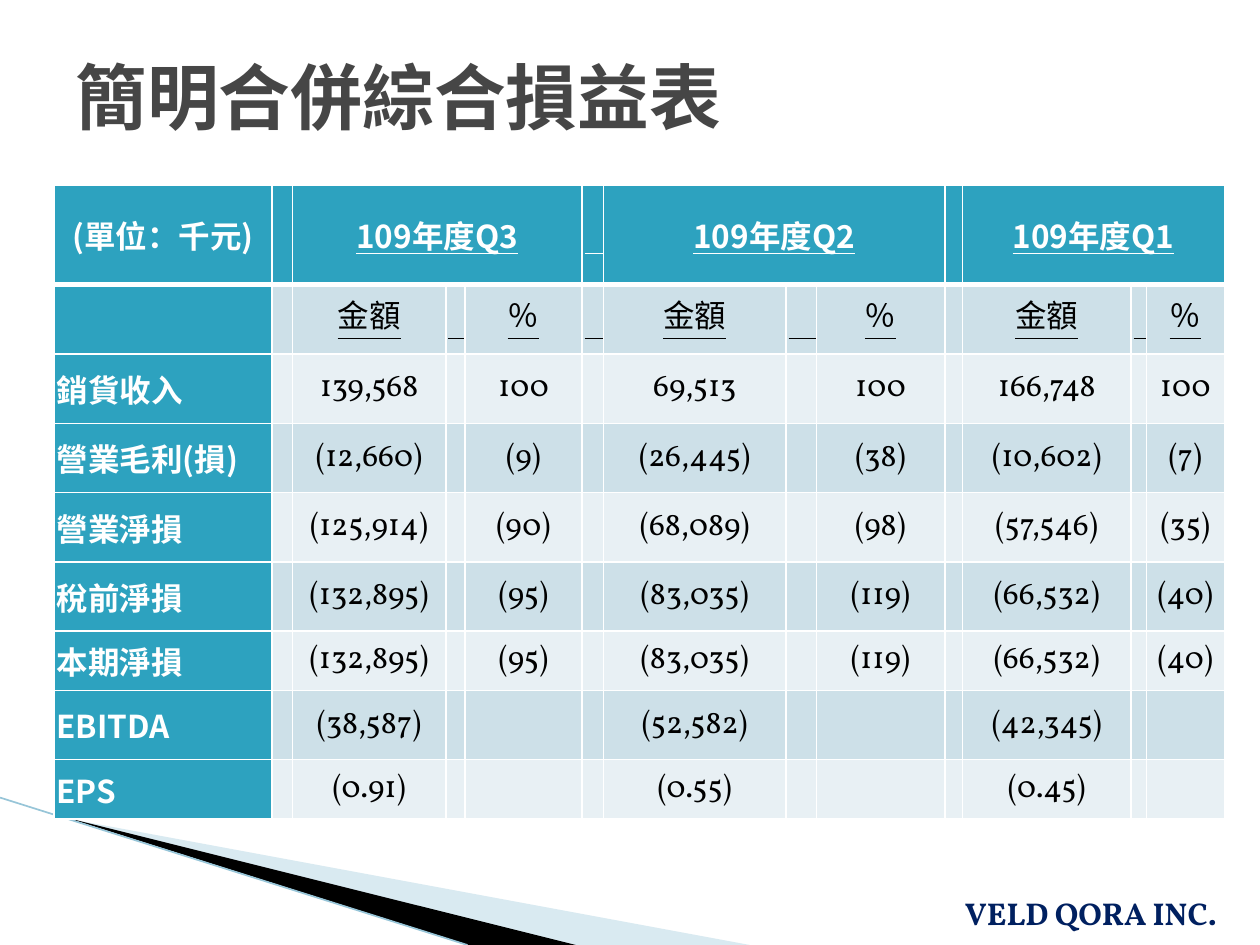
from itertools import product

from lxml import etree
from pptx import Presentation
from pptx.dml.color import RGBColor
from pptx.enum.shapes import MSO_CONNECTOR
from pptx.enum.text import MSO_ANCHOR, PP_ALIGN
from pptx.oxml import parse_xml
from pptx.oxml.ns import nsdecls, qn
from pptx.util import Inches, Pt

SANS, SERIF = "Noto Sans CJK SC", "Vollkorn"
TEAL, BAND_DARK, BAND_LIGHT, WHITE = "2DA2BF", "CDE0E8", "E8F0F4", "FFFFFF"

COLUMNS = [1.73, 0.16, 1.22, 0.15, 0.93, 0.17, 1.45, 0.24, 1.02, 0.14, 1.34, 0.12, 0.62]
ROWS = [0.79, 0.55, 0.55, 0.55, 0.55, 0.55, 0.47, 0.55, 0.47]
QUARTERS = ["109年度Q3", "109年度Q2", "109年度Q1"]
QUARTER_COLUMNS = [2, 6, 10]
VALUE_COLUMNS = [2, 4, 6, 8, 10, 12]
RULED_GAPS = [(0, 5), (1, 3), (1, 5), (1, 7), (1, 11)]
RESULTS = {
    "銷貨收入": ["139,568", "100", "69,513", "100", "166,748", "100"],
    "營業毛利(損)": ["(12,660)", "(9)", "(26,445)", "(38)", "(10,602)", "(7)"],
    "營業淨損": ["(125,914)", "(90)", "(68,089)", "(98)", "(57,546)", "(35)"],
    "稅前淨損": ["(132,895)", "(95)", "(83,035)", "(119)", "(66,532)", "(40)"],
    "本期淨損": ["(132,895)", "(95)", "(83,035)", "(119)", "(66,532)", "(40)"],
    "EBITDA": ["(38,587)", "", "(52,582)", "", "(42,345)", ""],
    "EPS": ["(0.91)", "", "(0.55)", "", "(0.45)", ""],
}


def color(value):
    return RGBColor.from_string(value)


def write(frame, text, typeface, ink, align=PP_ALIGN.LEFT, **font_values):
    paragraph = frame.paragraphs[0]
    paragraph.alignment = align
    run = paragraph.add_run()
    run.text = text
    for name, value in {"name": typeface, "size": Pt(18), **font_values}.items():
        setattr(run.font, name, value)
    run.font.color.rgb = color(ink)
    east_asian = etree.SubElement(run.font._element, qn("a:ea"))
    east_asian.set("typeface", typeface)


def add_label(slide, box, text, typeface, ink, wrap, size):
    frame = slide.shapes.add_textbox(*map(Inches, box)).text_frame
    frame.word_wrap = wrap
    write(frame, text, typeface, ink, size=Pt(size), bold=True)


def add_swoosh(slide, box):
    left, top, width, height = box
    right, bottom = left + width, top + height

    def wedge(points, fill):
        start, *rest = [(Inches(x), Inches(y)) for x, y in points]
        builder = slide.shapes.build_freeform(*start, scale=1.0)
        builder.add_line_segments(rest, close=True)
        shape = builder.convert_to_shape()
        shape.shadow.inherit = False
        shape.fill.solid()
        shape.fill.fore_color.rgb = color(fill)
        shape.line.fill.background()
        return shape

    # Pale wedge at 40 % opacity, then the black one
    tip = left + 0.55
    pale = wedge([(tip, top + 0.17), (right, bottom), (right - 1.39, bottom)], "A0CBDC")
    tint = pale.fill._xPr.find(".//" + qn("a:srgbClr"))
    etree.SubElement(tint, qn("a:alpha")).set("val", "40000")
    wedge([(tip - 0.02, top + 0.16), (right - 1.38, bottom), (right - 2.23, bottom)], "000000")

    # Thin edge line
    edge = slide.shapes.add_connector(
        MSO_CONNECTOR.STRAIGHT, Inches(left), Inches(top), Inches(left + 3.71), Inches(bottom))
    edge.line.color.rgb = color("97C5D8")
    edge.line.width = Pt(0.95)
    etree.SubElement(edge._element.spPr, qn("a:effectLst"))


def style_cell(cell, row, column):
    format_values = {
        "margin_left": Inches(0.02), "margin_right": Inches(0.02),
        "margin_top": 0, "margin_bottom": 0, "vertical_anchor": MSO_ANCHOR.MIDDLE,
    }
    for name, value in format_values.items():
        setattr(cell, name, value)

    # White borders, heavier below the header
    heavy_side = {0: "B", 1: "T"}.get(row)
    properties = cell._tc.get_or_add_tcPr()
    for side in "LRTB":
        width = Pt(3 if side == heavy_side else 1)
        properties.append(parse_xml(
            f'<a:ln{side} {nsdecls("a")} w="{width}"><a:solidFill>'
            f'<a:srgbClr val="{WHITE}"/></a:solidFill></a:ln{side}>'))

    band = BAND_DARK if row % 2 else BAND_LIGHT
    cell.fill.solid()
    cell.fill.fore_color.rgb = color(TEAL if row == 0 or column == 0 else band)


def add_income_table(slide, box):
    table = slide.shapes.add_table(len(ROWS), len(COLUMNS), *map(Inches, box)).table
    for column, width in zip(table.columns, COLUMNS):
        column.width = Inches(width)
    for row, height in zip(table.rows, ROWS):
        row.height = Inches(height)
    for row, column in product(range(len(ROWS)), range(len(COLUMNS))):
        style_cell(table.cell(row, column), row, column)

    def fill_in(row, column, text, align=PP_ALIGN.CENTER, underline=False):
        heading = row == 0 or column == 0
        write(table.cell(row, column).text_frame, text, SANS if heading else SERIF,
              WHITE if heading else "000000", align, bold=heading, underline=underline)

    # Quarter headings and their sub-headings
    fill_in(0, 0, "(單位：千元)")
    for column, quarter in zip(QUARTER_COLUMNS, QUARTERS):
        table.cell(0, column).merge(table.cell(0, column + 2))
        fill_in(0, column, quarter, underline=True)
        fill_in(1, column, "金額", underline=True)
        fill_in(1, column + 2, "％", underline=True)
    for row, column in RULED_GAPS:
        fill_in(row, column, "　", underline=True)

    # Results
    for row, (item, values) in enumerate(RESULTS.items(), start=2):
        fill_in(row, 0, item, PP_ALIGN.JUSTIFY)
        for column, value in zip(VALUE_COLUMNS, values):
            if value:
                fill_in(row, column, value)


def main():
    presentation = Presentation()
    presentation.slide_width, presentation.slide_height = Inches(10), Inches(7.5)
    slide = presentation.slides.add_slide(presentation.slide_layouts[6])
    add_swoosh(slide, (0, 6.33, 5.95, 1.17))
    add_income_table(slide, (0.43, 1.47, sum(COLUMNS), sum(ROWS)))
    add_label(slide, (7.56, 7.05, 2.37, 0.4), "VELD QORA INC.", SERIF, "002060", False, 18)
    add_label(slide, (0.5, 0.37, 9, 1.25), "簡明合併綜合損益表", SANS, "464646", True, 41)
    presentation.save("out.pptx")


if __name__ == "__main__":
    main()
